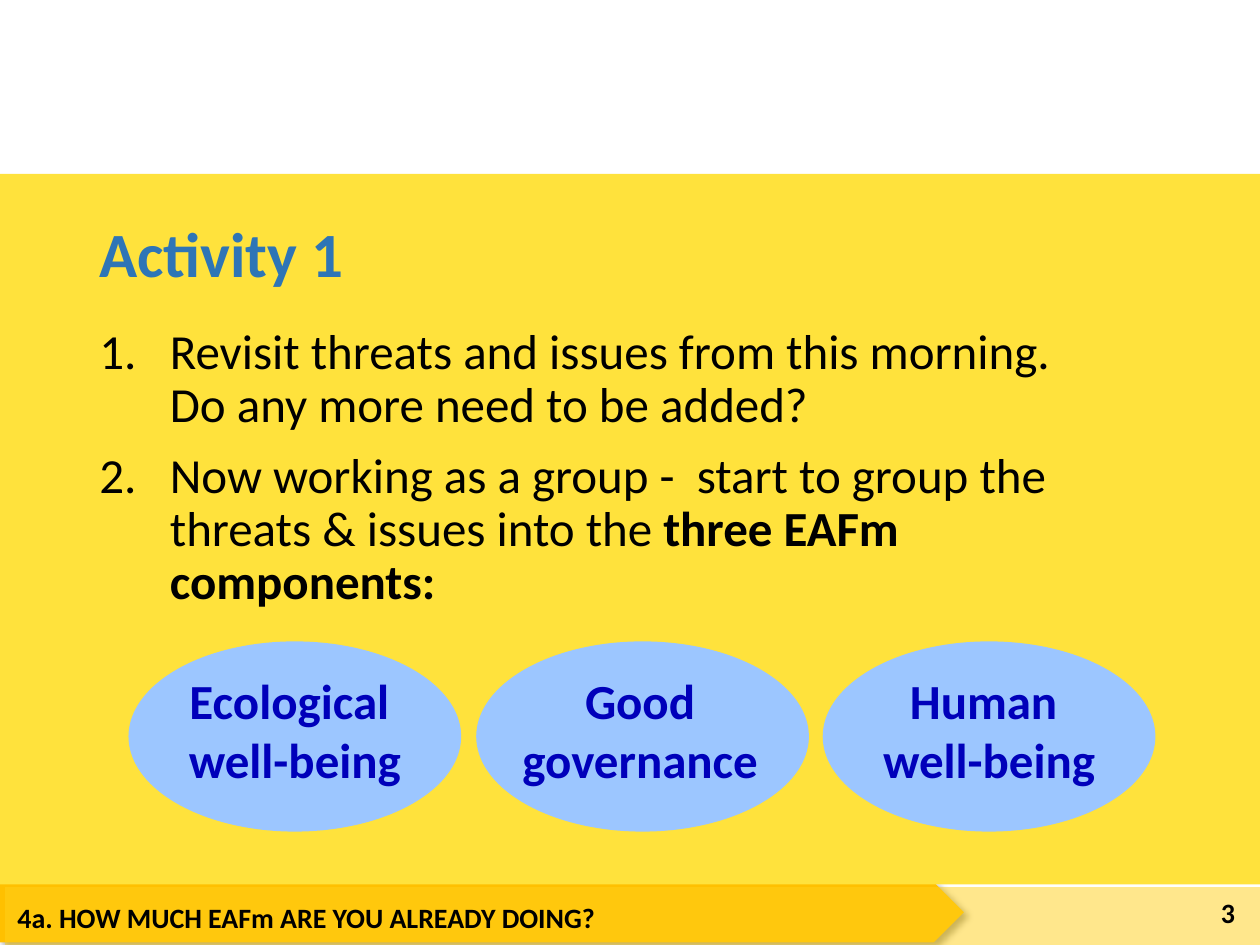
from dataclasses import dataclass

from lxml import etree
from pptx import Presentation
from pptx import util as u
from pptx.dml.color import RGBColor
from pptx.enum import shapes, text
from pptx.oxml.ns import qn

COLOURS = {
    "panel": "FFE23C", "footer arrow": "FFC000", "footer band": "FFD01B",
    "oval": "9CC6FF", "oval text": "0000BA", "title": "2E75B6",
    "body": "000000", "shadow": "000000",
}
FONT = "Calibri"
CELL = u.Inches(0.1)  # the slide is a grid of 100 columns by 75 rows
COLUMNS, ROWS = 100, 75


@dataclass(frozen=True)
class Area:
    """A rectangle in grid columns and rows."""
    column: float
    row: float
    columns: float
    rows: float

    def lengths(self) -> list[int]:
        return [round(CELL * n) for n in (self.column, self.row, self.columns, self.rows)]


@dataclass(frozen=True)
class Component:
    label: str
    column: float
    label_shift: float = 0


COMPONENTS = [
    Component("Ecological \nwell-being", 10.2),
    Component("Good\ngovernance", 37.8, -0.2),
    Component("Human \nwell-being", 65.3),
]
STEPS = [
    [("Revisit threats and issues from this morning. \nDo any more need to be added?", False)],
    [("Now working as a group -  start to group the threats & issues into the ", False),
     ("three EAFm components:", True)],
]


def add_filled(slide, kind, area: Area, colour: str):
    shape = slide.shapes.add_shape(kind, *area.lengths())
    shape.shadow.inherit = False
    shape.fill.solid()
    shape.fill.fore_color.rgb = RGBColor.from_string(COLOURS[colour])
    shape.line.fill.background()
    return shape


def set_alpha(colour_element, percent: int) -> None:
    etree.SubElement(colour_element, qn("a:alpha"), val=str(percent * 1000))


def add_drop_shadow(shape) -> None:
    effects = shape._element.spPr.find(qn("a:effectLst"))
    shadow = etree.SubElement(
        effects, qn("a:outerShdw"), blurRad=str(u.Pt(4)), dist=str(u.Pt(3)),
        dir=str(45 * 60000), algn="tl", rotWithShape="0")
    colour = etree.SubElement(shadow, qn("a:srgbClr"), val=COLOURS["shadow"])
    set_alpha(colour, 40)


def number_paragraph(paragraph, indent: float) -> None:
    properties = paragraph._p.get_or_add_pPr()
    width = round(CELL * indent)
    properties.set("marL", str(width))
    properties.set("indent", str(-width))
    etree.SubElement(properties, qn("a:buFont"), typeface="+mj-lt")
    etree.SubElement(properties, qn("a:buAutoNum"), type="arabicPeriod")


def add_text(slide, area: Area, paragraphs, *, size: float, colour: str = "body",
             bold: bool = False, align=text.PP_ALIGN.LEFT, anchor=text.MSO_ANCHOR.TOP,
             line_spacing: float = 1.0, gap: float = 0, number_indent: float = 0):
    """Write paragraphs, each a list of (wording, bold) runs, or one plain string."""
    if isinstance(paragraphs, str):
        paragraphs = [[(paragraphs, bold)]]
    frame = slide.shapes.add_textbox(*area.lengths()).text_frame
    frame.word_wrap = True
    frame.vertical_anchor = anchor
    for index, runs in enumerate(paragraphs):
        paragraph = frame.add_paragraph() if index else frame.paragraphs[0]
        paragraph.alignment = align
        paragraph.line_spacing = line_spacing
        paragraph.space_before = u.Pt(gap if index else 0)
        if number_indent:
            number_paragraph(paragraph, number_indent)
        paragraph.font.size = u.Pt(size)
        for wording, run_bold in runs:
            for line_index, line in enumerate(wording.split("\n")):
                if line_index:
                    paragraph.add_line_break()
                run = paragraph.add_run()
                run.text = line
                run.font.name = FONT
                run.font.size = u.Pt(size)
                run.font.bold = run_bold
                run.font.color.rgb = RGBColor.from_string(COLOURS[colour])


def add_footer(slide) -> None:
    arrow = add_filled(slide, shapes.MSO_SHAPE.PENTAGON, Area(0, 70, 76.5, 4.8), "footer arrow")
    add_drop_shadow(arrow)
    band = add_filled(slide, shapes.MSO_SHAPE.RECTANGLE,
                      Area(0.4, 70.4, COLUMNS - 0.4, 4.9), "footer band")
    set_alpha(band.fill._xPr.find(qn("a:solidFill"))[0], 50)
    add_text(slide, Area(0.4, 71, 73.5, 4.1), "4a. HOW MUCH EAFm ARE YOU ALREADY DOING?",
             size=16, bold=True)


def add_component(slide, component: Component) -> None:
    add_filled(slide, shapes.MSO_SHAPE.OVAL, Area(component.column, 50.9, 26.4, 15.1), "oval")
    add_text(slide, Area(component.column + component.label_shift, 52.7, 26.4, 12.1),
             component.label, size=28, colour="oval text", bold=True,
             align=text.PP_ALIGN.CENTER)


def main() -> None:
    presentation = Presentation()
    presentation.slide_width = CELL * COLUMNS
    presentation.slide_height = CELL * ROWS
    slide = presentation.slides.add_slide(presentation.slide_layouts[6])

    add_footer(slide)
    add_filled(slide, shapes.MSO_SHAPE.RECTANGLE, Area(0, 13.8, COLUMNS, 56.4), "panel")
    add_text(slide, Area(6.9, 16.3, 86.2, 8.2), "Activity 1", size=36, colour="title",
             bold=True, anchor=text.MSO_ANCHOR.MIDDLE, line_spacing=0.9)
    add_text(slide, Area(6.9, 25.5, 86.2, 42.1), STEPS, size=28, line_spacing=0.9,
             gap=10, number_indent=5.6)
    add_text(slide, Area(91.7, 70.4, 7.3, 4), "3", size=16, bold=True,
             align=text.PP_ALIGN.RIGHT, anchor=text.MSO_ANCHOR.MIDDLE)
    for component in COMPONENTS:
        add_component(slide, component)

    presentation.save("out.pptx")


if __name__ == "__main__":
    main()
